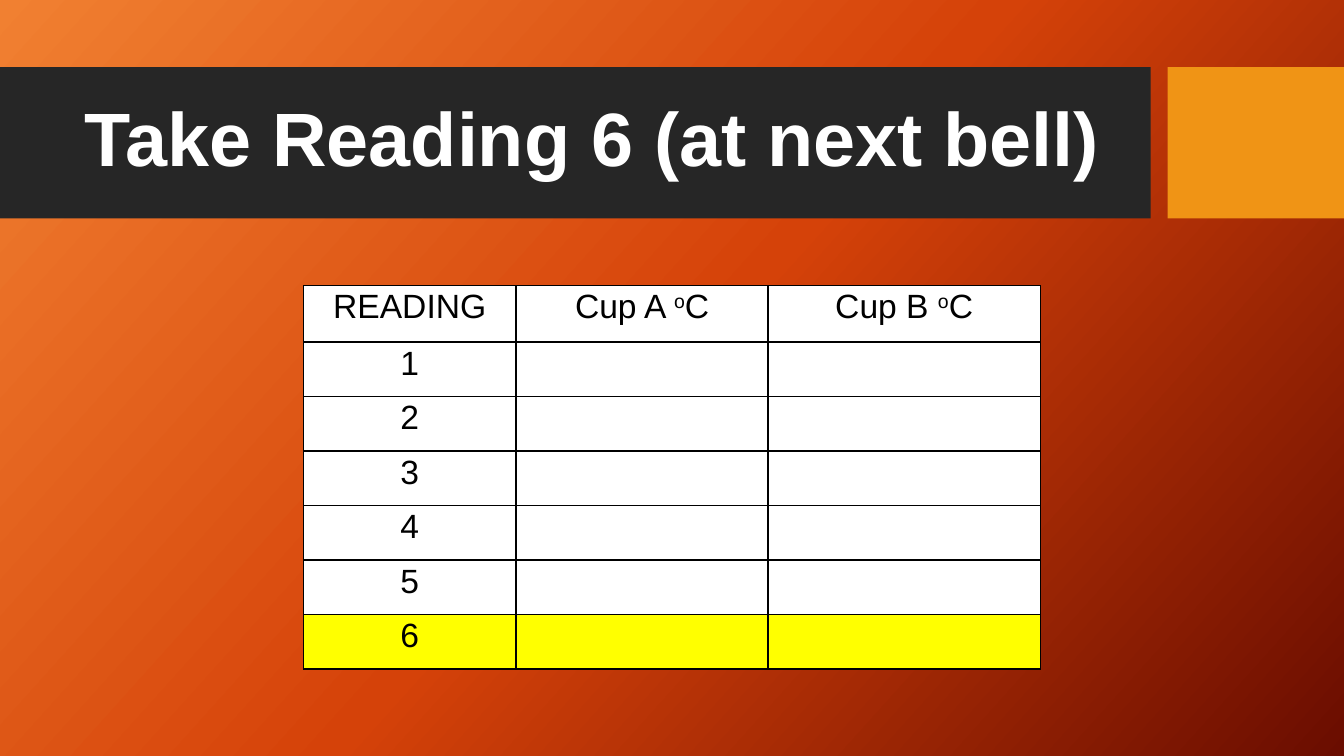
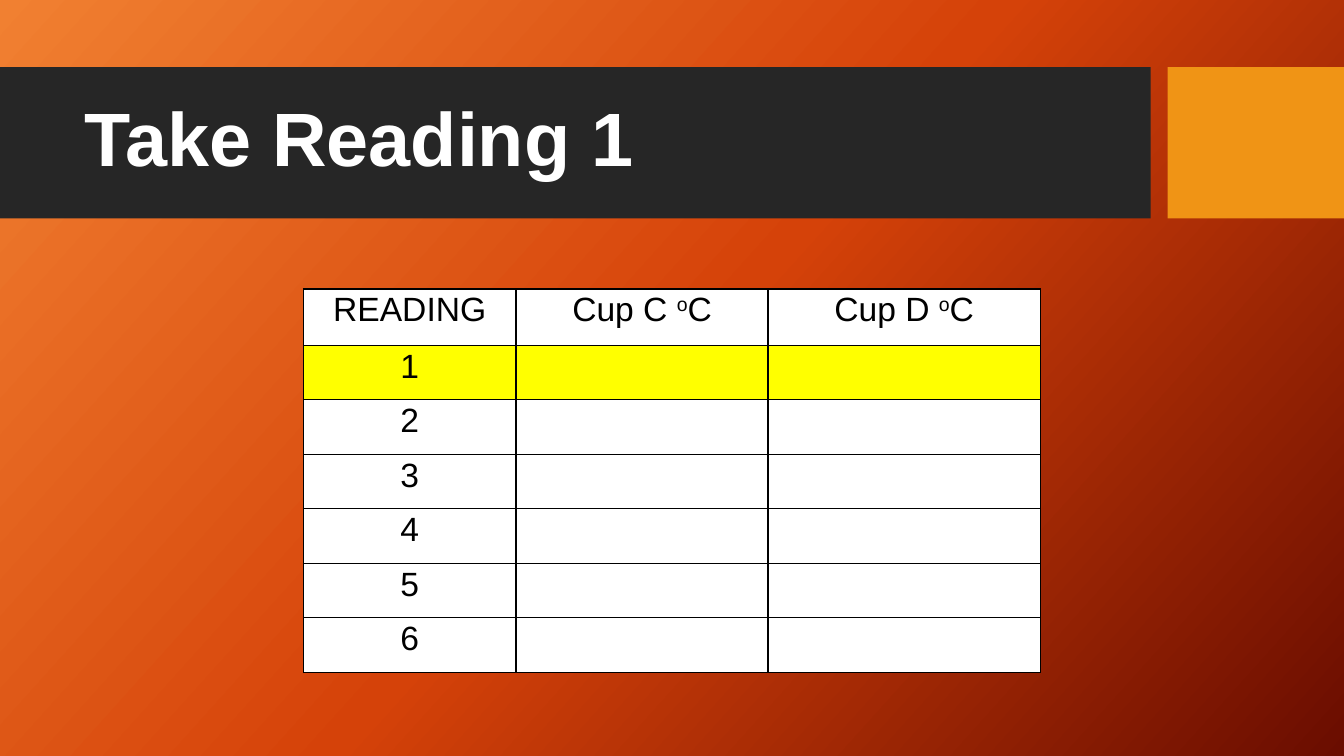
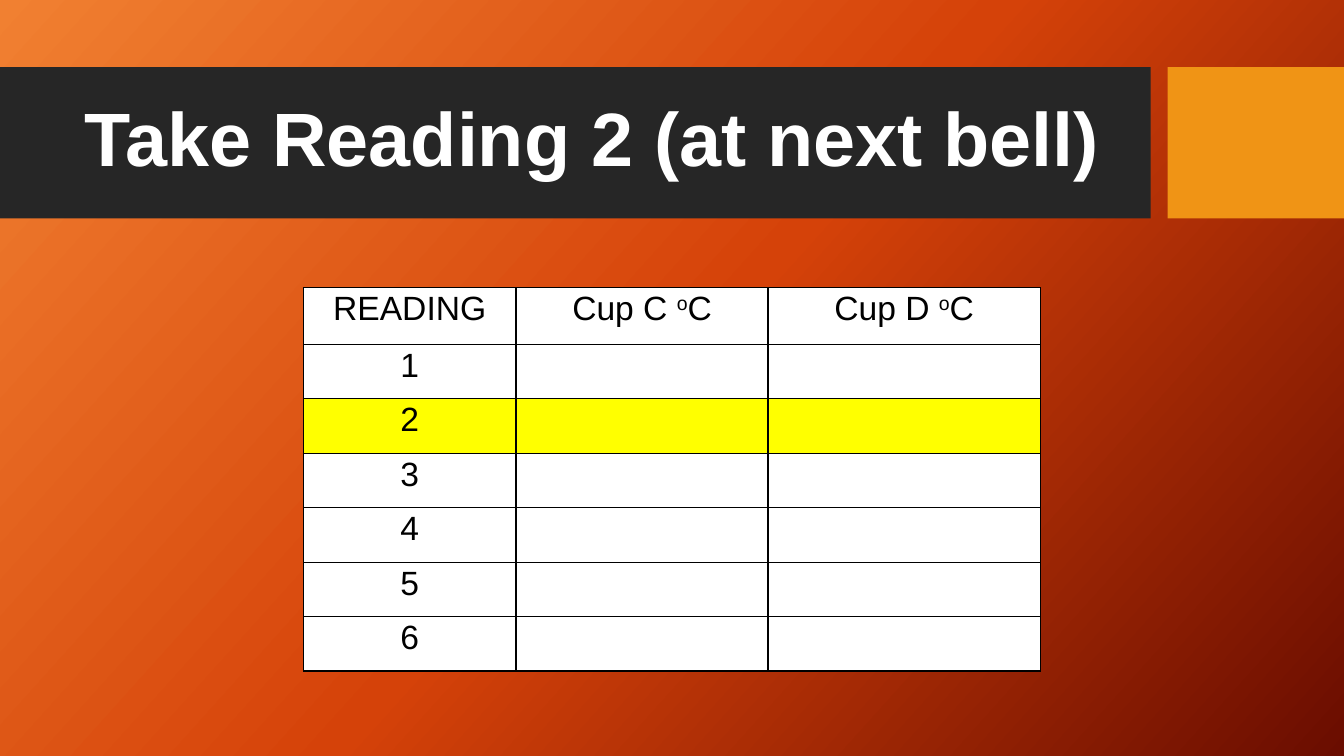
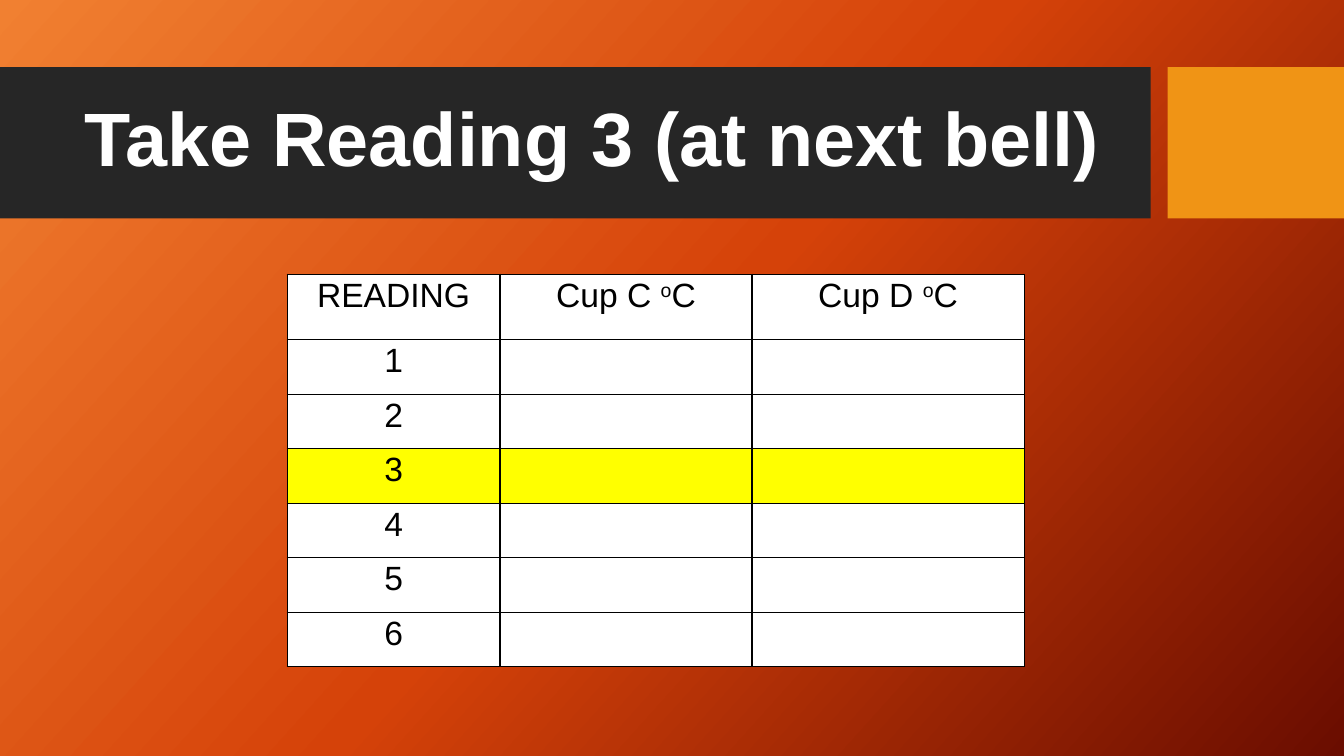
from copy import deepcopy
from dataclasses import dataclass

from lxml.etree import SubElement
from pptx import Presentation
from pptx.dml.color import RGBColor
from pptx.enum.shapes import MSO_SHAPE
from pptx.enum.text import MSO_ANCHOR, MSO_AUTO_SIZE, PP_ALIGN
from pptx.oxml.ns import qn
from pptx.slide import Slide, SlideLayout
from pptx.table import Table, _Cell
from pptx.util import Inches, Pt

# Grid: 160 columns by 90 rows of square units
HIGH = Inches(7.5)
WIDE = HIGH * 16 // 9
UNIT = HIGH / 90


def grid(*units: float) -> list[int]:
    return [round(unit * UNIT) for unit in units]


@dataclass(frozen=True)
class Theme:
    font: str = "Arial"
    title: int = 54
    cell: int = 24
    white: str = "FFFFFF"
    black: str = "000000"
    mark: str = "FFFF00"
    glow: tuple[str, ...] = ("F18031", "D54209", "6A0D00")
    angle: int = 42


@dataclass(frozen=True)
class Band:
    left: float
    width: float
    color: str


@dataclass(frozen=True)
class Page:
    title: str
    cups: str
    mark: int
    top: float
    left: float = 36.12
    head: float = 6.72


THEME = Theme()
BANDS = [Band(0, 137, "262626"), Band(139, 21, "F09415")]
COLS = (25.32, 30, 32.4)
ROW = 6.49
COUNT = 6
PAGES = [
    Page("Take Reading 6 (at next bell)", "AB", 6, 34),
    Page("Take Reading 1", "CD", 1, 34.4),
    Page("Take Reading 2 (at next bell)", "CD", 2, 34.25),
    Page("Take Reading 3 (at next bell)", "CD", 3, 32.65, 34.2, 7.8),
]


def color(code: str) -> RGBColor:
    return RGBColor.from_string(code)


# Shared layout: gradient, title place and bands
def paint(layout: SlideLayout) -> None:
    fill = layout.background.fill
    fill.gradient()
    fill.gradient_angle = 360 - THEME.angle
    stops = layout.element.find(".//" + qn("a:gsLst"))
    stops.append(deepcopy(stops[0]))
    last = len(THEME.glow) - 1
    for i, (stop, code) in enumerate(zip(fill.gradient_stops, THEME.glow)):
        stop.position = i / last
        stop.color.rgb = color(code)
    title = layout.placeholders[0]
    title.left, title.top, title.width, title.height = grid(8.88, 9.84, 126.12, 14.16)


def add_bands(slide: Slide, layout: SlideLayout) -> None:
    """Draw the bands on a slide, then move them behind the layout's title."""
    for i, band in enumerate(BANDS):
        bar = slide.shapes.add_shape(MSO_SHAPE.RECTANGLE, *grid(band.left, 8, band.width, 18))
        bar.shadow.inherit = False
        bar.fill.solid()
        bar.fill.fore_color.rgb = color(band.color)
        bar.line.fill.background()
        bar.element.nvSpPr.cNvPr.id = 20 + i
        layout.shapes.element.insert(2 + i, bar.element)


# Title
def set_title(slide: Slide, text: str) -> None:
    frame = slide.shapes.title.text_frame
    frame.text = text
    frame.word_wrap = True
    frame.auto_size = MSO_AUTO_SIZE.NONE
    frame.vertical_anchor = MSO_ANCHOR.MIDDLE
    line = frame.paragraphs[0]
    line.alignment = PP_ALIGN.LEFT
    line.line_spacing = 0.9
    font = line.runs[0].font
    font.name, font.size, font.bold = THEME.font, Pt(THEME.title), True
    font.color.rgb = color(THEME.white)


# Table cells
def add_edges(cell: _Cell) -> None:
    props = cell._tc.get_or_add_tcPr()
    for side in ("lnL", "lnR", "lnT", "lnB"):
        edge = SubElement(props, qn(f"a:{side}"), w=str(Pt(1)))
        fill = SubElement(edge, qn("a:solidFill"))
        SubElement(fill, qn("a:srgbClr"), val=THEME.black)


def set_cell(cell: _Cell, parts: list[str], back: str) -> None:
    """Fill a cell; the second of its text parts is raised."""
    cell.margin_left = cell.margin_right = Inches(0.07)
    cell.margin_top = cell.margin_bottom = 0
    add_edges(cell)
    cell.fill.solid()
    cell.fill.fore_color.rgb = color(back)
    line = cell.text_frame.paragraphs[0]
    line.alignment = PP_ALIGN.CENTER
    line.line_spacing = 1.07
    for i, part in enumerate(parts):
        run = line.add_run()
        run.text = part
        run.font.name, run.font.size = THEME.font, Pt(THEME.cell)
        run.font.color.rgb = color(THEME.black)
        if i == 1:
            run._r.get_or_add_rPr().set("baseline", "30000")


def add_log(slide: Slide, page: Page) -> Table:
    rows = [page.head] + [ROW] * COUNT
    box = grid(page.left, page.top, sum(COLS), sum(rows))
    table = slide.shapes.add_table(len(rows), len(COLS), *box).table
    table.first_row = table.horz_banding = False
    for col, width in zip(table.columns, grid(*COLS)):
        col.width = width
    for row, height in zip(table.rows, grid(*rows)):
        row.height = height
    texts = [[["READING"]] + [[f"Cup {cup} ", "o", "C"] for cup in page.cups]]
    texts += [[[str(n)], [], []] for n in range(1, COUNT + 1)]
    for r, row in enumerate(texts):
        back = THEME.mark if r == page.mark else THEME.white
        for c, parts in enumerate(row):
            set_cell(table.cell(r, c), parts, back)
    return table


def main() -> None:
    deck = Presentation()
    deck.slide_width, deck.slide_height = WIDE, HIGH
    layout = deck.slide_layouts.get_by_name("Title Only")
    paint(layout)
    for page in PAGES:
        slide = deck.slides.add_slide(layout)
        set_title(slide, page.title)
        add_log(slide, page)
    add_bands(deck.slides[0], layout)
    deck.save("out.pptx")


if __name__ == "__main__":
    main()
